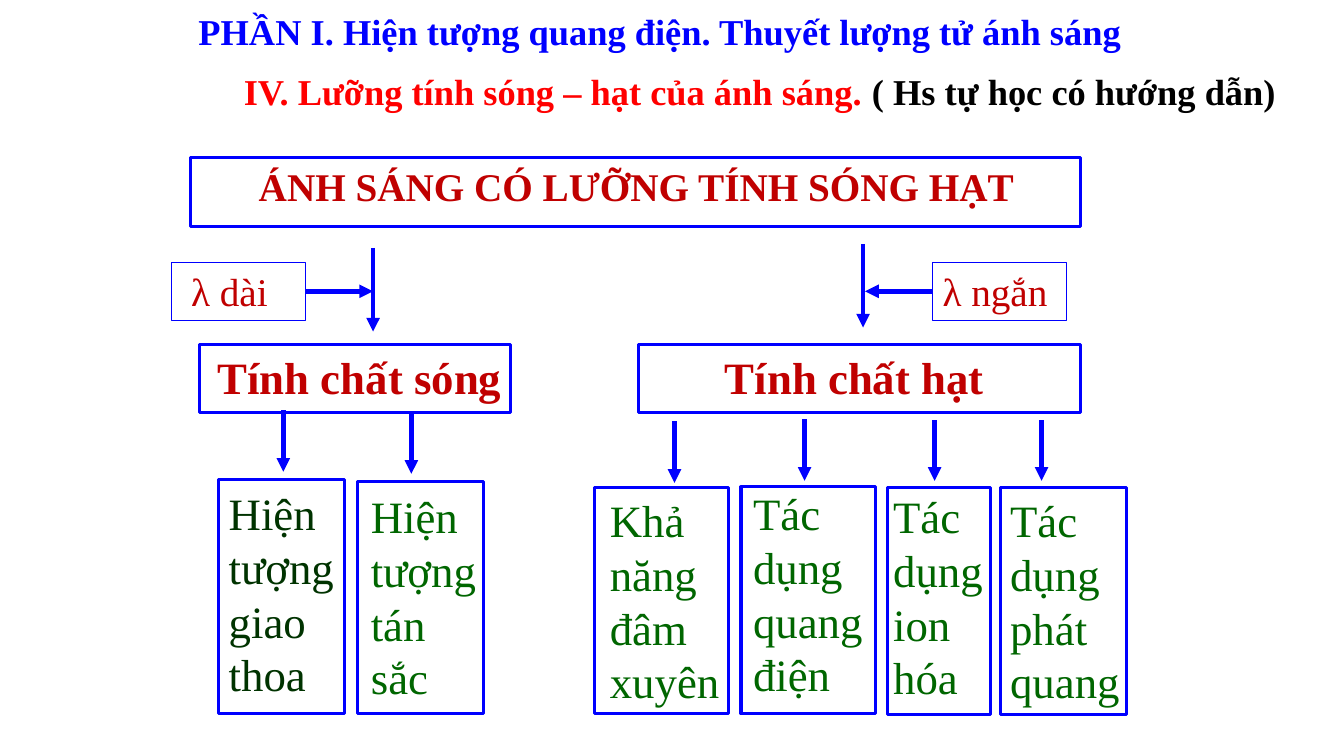
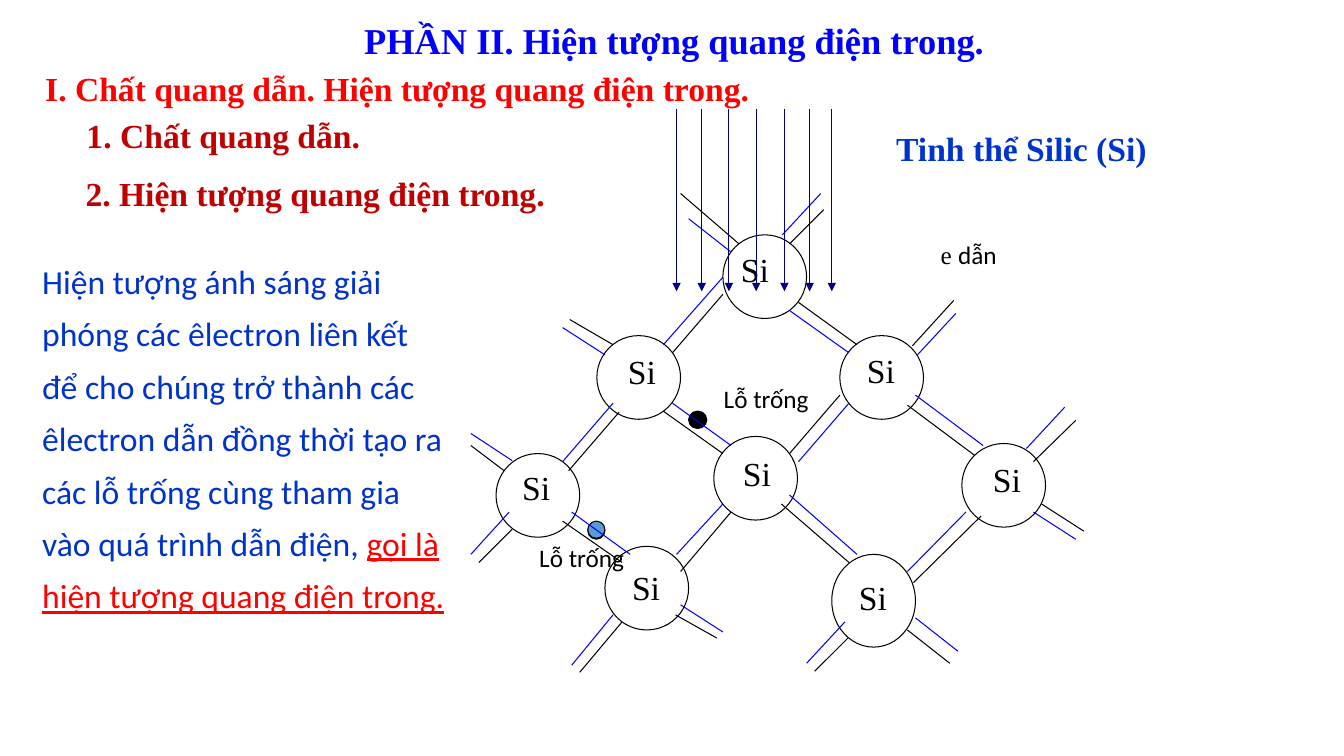
from lxml.etree import SubElement
from pptx import Presentation
from pptx.dml.color import RGBColor
from pptx.enum.shapes import MSO_CONNECTOR, MSO_SHAPE
from pptx.enum.text import MSO_ANCHOR, PP_ALIGN
from pptx.oxml.ns import qn
from pptx.util import Pt

PX = 9144
SERIF = "Times New Roman"
SANS = "Calibri"
TITLE_SIZE = 26
COLORS = {
    "blue": "0000FF",
    "navy": "000080",
    "royal": "0033CC",
    "red": "FF0000",
    "crimson": "C00000",
    "green": "006600",
    "dark_green": "003300",
    "black": "000000",
    "sky": "5B9BD5",
}
RGB = {name: RGBColor.from_string(value) for name, value in COLORS.items()}


def add_text(slide, frame, runs, size, bold=False, font=SERIF, align=PP_ALIGN.LEFT):
    shape = slide.shapes.add_textbox(*[value * PX for value in frame])
    text_frame = shape.text_frame
    text_frame.word_wrap = True
    text_frame.vertical_anchor = MSO_ANCHOR.TOP
    paragraph = text_frame.paragraphs[0]
    paragraph.alignment = align
    for text, color in runs:
        run = paragraph.add_run()
        run.text = text
        run.font.name = font
        run.font.size = Pt(size)
        run.font.bold = bold
        run.font.color.rgb = RGB[color]
    return shape


def add_line(slide, points, color, width=0.75, arrow=False):
    connector = slide.shapes.add_connector(
        MSO_CONNECTOR.STRAIGHT, *[value * PX for value in points]
    )
    connector.line.color.rgb = RGB[color]
    connector.line.width = Pt(width)
    if arrow:
        SubElement(connector.line._get_or_add_ln(), qn("a:tailEnd"), type="triangle")
    SubElement(connector._element.spPr, qn("a:effectLst"))
    return connector


presentation = Presentation()
presentation.slide_width = 1333 * PX
presentation.slide_height = 750 * PX
blank = presentation.slide_layouts[6]

slide = presentation.slides.add_slide(blank)
add_text(slide, (187, 4, 1000, 54),
         [("PHẦN I. Hiện tượng quang điện. Thuyết lượng tử ánh sáng", "blue")],
         TITLE_SIZE, bold=True)
subtitle = add_text(slide, (232, 69, 1064, 50),
                    [("IV. Lưỡng tính sóng – hạt của ánh sáng. ", "red"),
                     ("( Hs tự học có hướng dẫn)", "black")],
                    TITLE_SIZE, bold=True)
subtitle.text_frame.paragraphs[0].line_spacing = 0.9

wavelengths = [
    ((170, 260, 133, 58), " λ dài", 3, 370),
    ((925, 260, 133, 58), "λ ngắn", 1, 858),
]
for frame, text, side, target in wavelengths:
    label = add_text(slide, frame, [(text, "crimson")], 28)
    label.line.color.rgb = RGB["blue"]
    label.line.width = Pt(0.75)
    connector = add_line(slide, (target, 289, target, 289), "blue", 3.25, arrow=True)
    connector.begin_connect(label, side)

headings = [
    ((166, 156, 930, 60), "ÁNH SÁNG CÓ LƯỠNG TÍNH SÓNG HẠT", 28, PP_ALIGN.CENTER),
    ((206, 342, 367, 63), "Tính chất sóng", 32, PP_ALIGN.LEFT),
    ((664, 342, 367, 63), "Tính chất hạt", 32, PP_ALIGN.CENTER),
]
for frame, text, size, align in headings:
    add_text(slide, frame, [(text, "crimson")], size, bold=True, align=align)

phenomena = [
    ((217, 477, 133, 226), "Hiện tượng giao thoa", "dark_green"),
    ((358, 480, 133, 226), "Hiện tượng tán sắc", "green"),
    ((595, 484, 150, 226), "Khả năng đâm xuyên", "green"),
    ((737, 477, 158, 225), "Tác dụng quang điện", "green"),
    ((876, 480, 125, 225), "Tác dụng ion hóa", "green"),
    ((992, 484, 133, 225), "Tác dụng phát quang", "green"),
]
for frame, text, color in phenomena:
    add_text(slide, frame, [(text, color)], 32)

outlines = [
    (189, 156, 883, 69), (198, 342, 308, 67), (633, 342, 439, 67),
    (217, 476, 125, 232), (355, 478, 125, 230), (590, 484, 133, 224),
    (735, 483, 133, 225), (880, 484, 102, 225), (992, 484, 125, 225),
]
for frame in outlines:
    shape = slide.shapes.add_shape(MSO_SHAPE.RECTANGLE, *[value * PX for value in frame])
    shape.shadow.inherit = False
    shape.fill.background()
    shape.line.color.rgb = RGB["blue"]
    shape.line.width = Pt(2.25)

down_arrows = [
    (370, 246, 329), (856, 242, 325), (281, 407, 468), (408, 410, 470),
    (669, 418, 479), (798, 416, 477), (927, 417, 477), (1033, 417, 477),
]
for x, top, bottom in down_arrows:
    add_line(slide, (x, top, x, bottom), "blue", 3.25, arrow=True)

slide = presentation.slides.add_slide(blank)
atoms = [
    (717, 233, 83, 725, 242), (592, 333, 83, 613, 343),
    (833, 333, 83, 850, 342), (708, 433, 83, 727, 444),
    (492, 450, 83, 508, 458), (954, 440, 83, 975, 450),
    (600, 542, 83, 617, 558), (825, 550, 92, 842, 567),
]
circles = [(left, top, 83, height, None) for left, top, height, *label in atoms]
circles += [
    (683, 408, 17, 17, "sky"), (684, 408, 17, 17, "black"),
    (583, 518, 17, 17, "black"), (583, 517, 17, 17, "sky"),
]
for *frame, fill in circles:
    shape = slide.shapes.add_shape(MSO_SHAPE.OVAL, *[value * PX for value in frame])
    shape.shadow.inherit = False
    if fill:
        shape.fill.solid()
        shape.fill.fore_color.rgb = RGB[fill]
    else:
        shape.fill.background()
    shape.line.color.rgb = RGB["black"]
    shape.line.width = Pt(0.75)
for *circle, left, top in atoms:
    add_text(slide, (left, top, 58, 50), [("Si", "black")], 24)

bonds = {
    "black": [
        (658, 408, 717, 450), (775, 500, 842, 558), (675, 567, 725, 508),
        (783, 450, 833, 392), (564, 467, 614, 409), (558, 517, 617, 558),
        (900, 402, 967, 452), (906, 578, 973, 512), (792, 300, 850, 342),
        (667, 350, 717, 292), (617, 617, 575, 667), (508, 525, 475, 558),
        (841, 633, 808, 666), (817, 208, 783, 242), (946, 298, 905, 343),
        (1067, 417, 1025, 458), (467, 442, 500, 467), (565, 317, 608, 342),
        (675, 192, 733, 242), (670, 610, 711, 633), (900, 625, 942, 658),
        (1033, 500, 1075, 527),
    ],
    "blue": [
        (667, 400, 725, 442), (783, 491, 850, 550), (908, 392, 975, 442),
        (783, 308, 842, 350), (567, 508, 625, 550), (658, 342, 717, 275),
        (467, 550, 505, 508), (671, 550, 717, 500), (792, 458, 842, 400),
        (567, 660, 608, 610), (558, 458, 608, 400), (910, 352, 948, 311),
        (776, 233, 814, 192), (900, 567, 958, 508), (1018, 445, 1056, 404),
        (467, 430, 508, 457), (558, 325, 600, 352), (675, 600, 717, 627),
        (908, 613, 950, 646), (1025, 508, 1067, 535), (800, 658, 838, 617),
        (683, 217, 725, 250),
    ],
}
for color, lines in bonds.items():
    for points in lines:
        add_line(slide, points, color)

for x in (671, 696, 723, 750, 778, 803, 825):
    add_line(slide, (x, 108, x, 289), "navy", arrow=True)

electron = add_text(slide, (923, 233, 152, 40), [("e ", "black"), ("dẫn", "black")], 18)
electron.text_frame.paragraphs[0].runs[1].font.name = SANS
for frame in ((708, 375, 183, 40), (525, 533, 167, 40)):
    add_text(slide, frame, [("Lỗ trống", "black")], 18, font=SANS)

add_text(slide, (169, 13, 1000, 54),
         [("PHẦN II. Hiện tượng quang điện trong.", "blue")],
         TITLE_SIZE, bold=True, align=PP_ALIGN.CENTER)
section_headings = [
    ((35, 62, 790, 50), "I. Chất quang dẫn. Hiện tượng quang điện trong.", "red"),
    ((76, 109, 310, 50), "1. Chất quang dẫn.", "crimson"),
    ((75, 167, 500, 50), "2. Hiện tượng quang điện trong.", "crimson"),
    ((879, 122, 288, 50), "Tinh thể Silic (Si)", "royal"),
]
for frame, text, color in section_headings:
    add_text(slide, frame, [(text, color)], 24, bold=True)

definition = add_text(
    slide, (32, 242, 419, 430),
    [("Hiện tượng ánh sáng giải phóng các êlectron liên kết để cho chúng trở thành "
      "các êlectron dẫn đồng thời tạo ra các lỗ trống cùng tham gia vào quá trình "
      "dẫn điện, ", "royal"),
     ("gọi là hiện tượng quang điện trong.", "red")],
    24, font=SANS)
paragraph = definition.text_frame.paragraphs[0]
paragraph.line_spacing = 1.3
paragraph.runs[1].font.underline = True

presentation.save("out.pptx")
